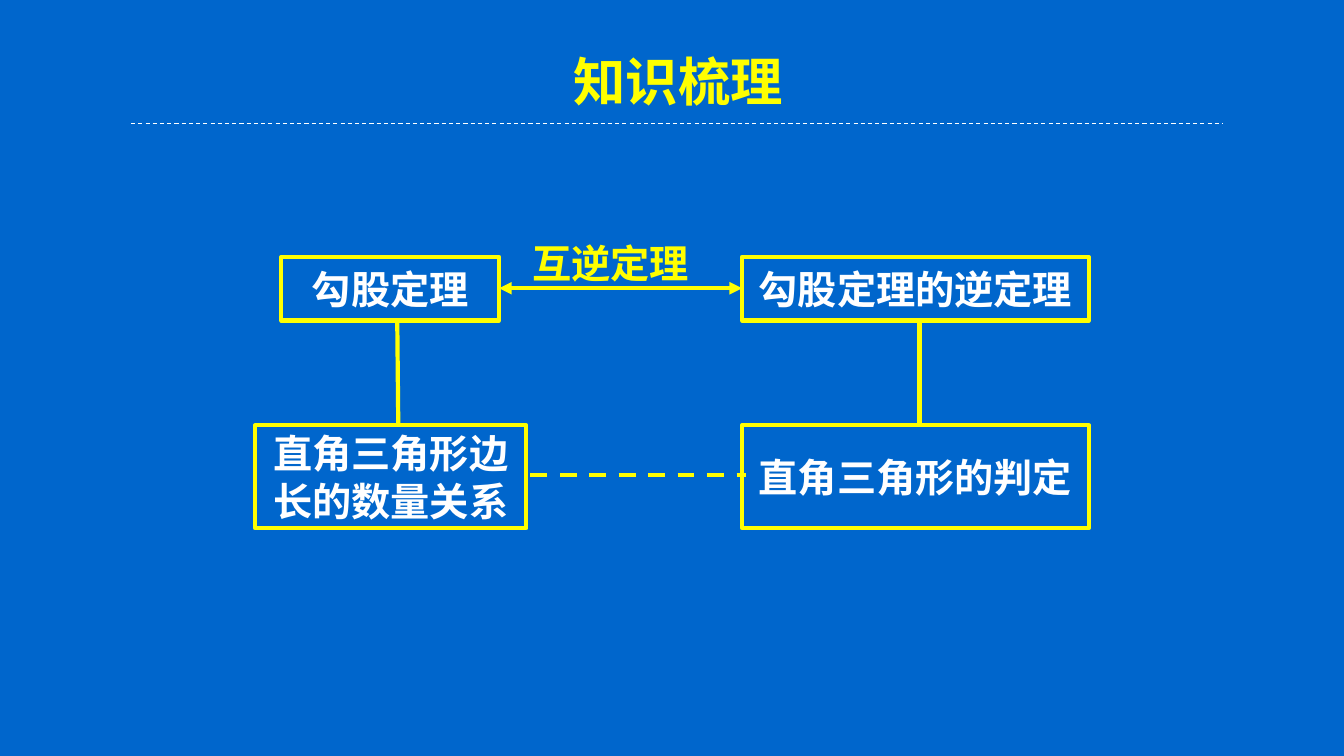
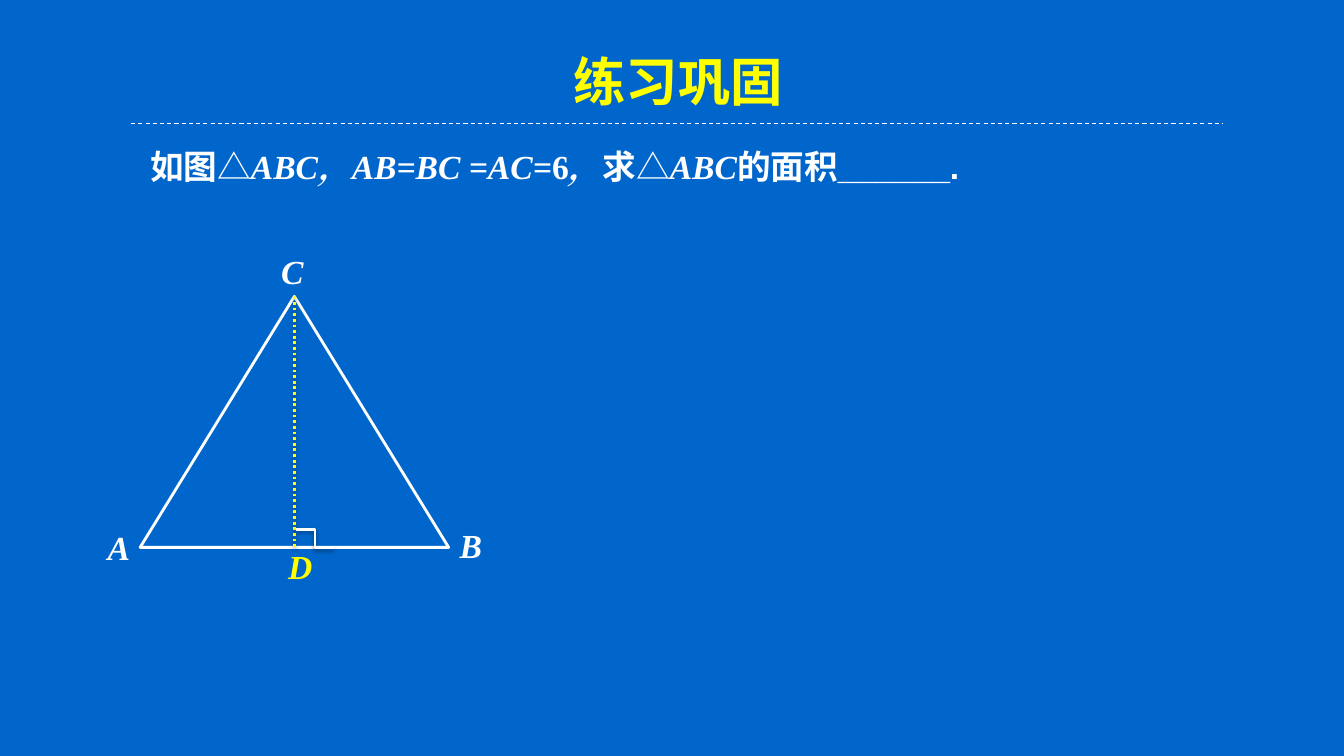
import pptx
import pptx.util
import pptx.dml.color
import pptx.enum.dml
import pptx.enum.shapes
import pptx.enum.text
import pptx.oxml
import pptx.oxml.ns

SCALE = 9144
BLUE, YELLOW, WHITE, BLACK = "0066CC", "FFFF00", "FFFFFF", "000000"
SANS, HEADING, SERIF = "Arial", "Noto Sans CJK SC", "Times New Roman"
DASH = pptx.enum.dml.MSO_LINE.DASH
DOTS = pptx.enum.dml.MSO_LINE.ROUND_DOT
STRAIGHT = pptx.enum.shapes.MSO_CONNECTOR.STRAIGHT
ELBOW = pptx.enum.shapes.MSO_CONNECTOR.ELBOW
RECTANGLE = pptx.enum.shapes.MSO_SHAPE.RECTANGLE
TRIANGLE = pptx.enum.shapes.MSO_SHAPE.ISOSCELES_TRIANGLE

TITLE_BOX = (559, 44, 261, 73)
TITLE_RULE = (130, 123, 1213, 123)

THEOREM_BOXES = [
    ("勾股定理", (279, 255, 216, 63)),
    ("勾股定理的逆定理", (736, 255, 344, 63)),
    ("直角三角形边长的数量关系", (253, 422, 269, 102)),
    ("直角三角形的判定", (736, 422, 344, 102)),
]
THEOREM_LINES = [
    ((495, 286, 736, 286), None, True),
    ((394, 316, 395, 420), None, False),
    ((912, 316, 912, 420), None, False),
    ((526, 471, 740, 471), DASH, False),
]
INVERSE_LABEL = ("互逆定理", (518, 223, 200, 59))

QUESTION_BOX = (139, 140, 829, 110)
QUESTION = [
    ("如图", SANS, False),
    ("△", SERIF, False),
    ("ABC，AB=BC =AC=", SERIF, True),
    ("6", SERIF, False),
    ("，", SERIF, True),
    ("求", SANS, False),
    ("△", SERIF, False),
    ("ABC", SERIF, True),
    ("的面积______.", SANS, False),
]
TRIANGLE_BOX = (139, 294, 306, 249)
ALTITUDE = (292, 294, 292, 543)
RIGHT_ANGLE = (294, 525, 331, 543)
POINTS = [
    ("A", 97, 518, WHITE),
    ("B", 446, 516, WHITE),
    ("C", 269, 244, WHITE),
    ("D", 276, 537, YELLOW),
]


def color(value):
    return pptx.dml.color.RGBColor.from_string(value)


def px(*values):
    return [pptx.util.Emu(value * SCALE) for value in values]


def element(tag, **attributes):
    node = pptx.oxml.parse_xml(f"<a:{tag} {pptx.oxml.ns.nsdecls('a')}/>")
    for name, value in attributes.items():
        node.set(name, str(value))
    return node


def effects(blur=0, distance=0, angle=90, opacity=0):
    effect_list = element("effectLst")
    if opacity:
        shadow = element("outerShdw", blurRad=pptx.util.Pt(blur), dist=pptx.util.Pt(distance),
                         dir=angle * 60000, algn="ctr", rotWithShape=0)
        black = element("srgbClr", val=BLACK)
        black.append(element("alpha", val=opacity * 1000))
        shadow.append(black)
        effect_list.append(shadow)
    return effect_list


def add_run(paragraph, text, font, size, fill, italic=False):
    run = paragraph.add_run()
    run.text = text
    run.font.size = pptx.util.Pt(size)
    run.font.bold = True
    run.font.italic = italic
    run.font.color.rgb = color(fill)
    run.font.name = font
    run.font._element.find(pptx.oxml.ns.qn("a:latin")).addnext(element("ea", typeface=font))
    return run


def add_text_box(slide, box):
    text_frame = slide.shapes.add_textbox(*px(*box)).text_frame
    text_frame.word_wrap = True
    return text_frame.paragraphs[0]


def style_line(line, stroke, width, dash=None):
    line.color.rgb = color(stroke)
    line.width = pptx.util.Pt(width)
    if dash:
        line.dash_style = dash


def add_line(slide, ends, stroke, width, dash=None, kind=STRAIGHT, arrows=False, shadow=None):
    connector = slide.shapes.add_connector(kind, *px(*ends))
    style_line(connector.line, stroke, width, dash)
    if arrows:
        for tag in ("headEnd", "tailEnd"):
            connector.line._get_or_add_ln().append(element(tag, type="triangle"))
    connector._element.spPr.append(effects(**(shadow or {})))


def add_outline(slide, kind, box, stroke, width):
    shape = slide.shapes.add_shape(kind, *px(*box))
    shape.shadow.inherit = False
    shape.fill.background()
    style_line(shape.line, stroke, width)
    return shape


def add_slide(presentation, title):
    slide = presentation.slides.add_slide(presentation.slide_layouts[6])
    slide.background.fill.solid()
    slide.background.fill.fore_color.rgb = color(BLUE)
    run = add_run(add_text_box(slide, TITLE_BOX), title, HEADING, 37.4, YELLOW)
    run.font._element.find(pptx.oxml.ns.qn("a:latin")).addprevious(
        effects(blur=3, distance=3, angle=45, opacity=43))
    add_line(slide, TITLE_RULE, WHITE, 0.75, DASH)
    return slide


def build_summary(presentation):
    slide = add_slide(presentation, "知识梳理")
    for text, box in THEOREM_BOXES:
        text_frame = add_outline(slide, RECTANGLE, box, YELLOW, 3).text_frame
        text_frame.word_wrap = True
        text_frame.vertical_anchor = pptx.enum.text.MSO_ANCHOR.MIDDLE
        paragraph = text_frame.paragraphs[0]
        paragraph.alignment = pptx.enum.text.PP_ALIGN.CENTER
        add_run(paragraph, text, SANS, 28, WHITE)
    for ends, dash, arrows in THEOREM_LINES:
        add_line(slide, ends, YELLOW, 3, dash, arrows=arrows)
    text, box = INVERSE_LABEL
    paragraph = add_text_box(slide, box)
    paragraph.line_spacing = 1.2
    add_run(paragraph, text, HEADING, 28, YELLOW)


def build_exercise(presentation):
    slide = add_slide(presentation, "练习巩固")
    paragraph = add_text_box(slide, QUESTION_BOX)
    for text, font, italic in QUESTION:
        add_run(paragraph, text, font, 24, WHITE, italic)
    add_outline(slide, TRIANGLE, TRIANGLE_BOX, WHITE, 2)
    shadow = {"blur": 3.1, "distance": 1.6, "opacity": 38}
    add_line(slide, ALTITUDE, YELLOW, 2, DOTS, shadow=shadow)
    add_line(slide, RIGHT_ANGLE, WHITE, 2, kind=ELBOW, shadow=shadow)
    for name, left, top, fill in POINTS:
        add_run(add_text_box(slide, (left, top, 55, 50)), name, SERIF, 24, fill, True)


def main():
    presentation = pptx.Presentation()
    presentation.slide_width, presentation.slide_height = px(1333, 750)
    build_summary(presentation)
    build_exercise(presentation)
    presentation.save("out.pptx")


if __name__ == "__main__":
    main()
